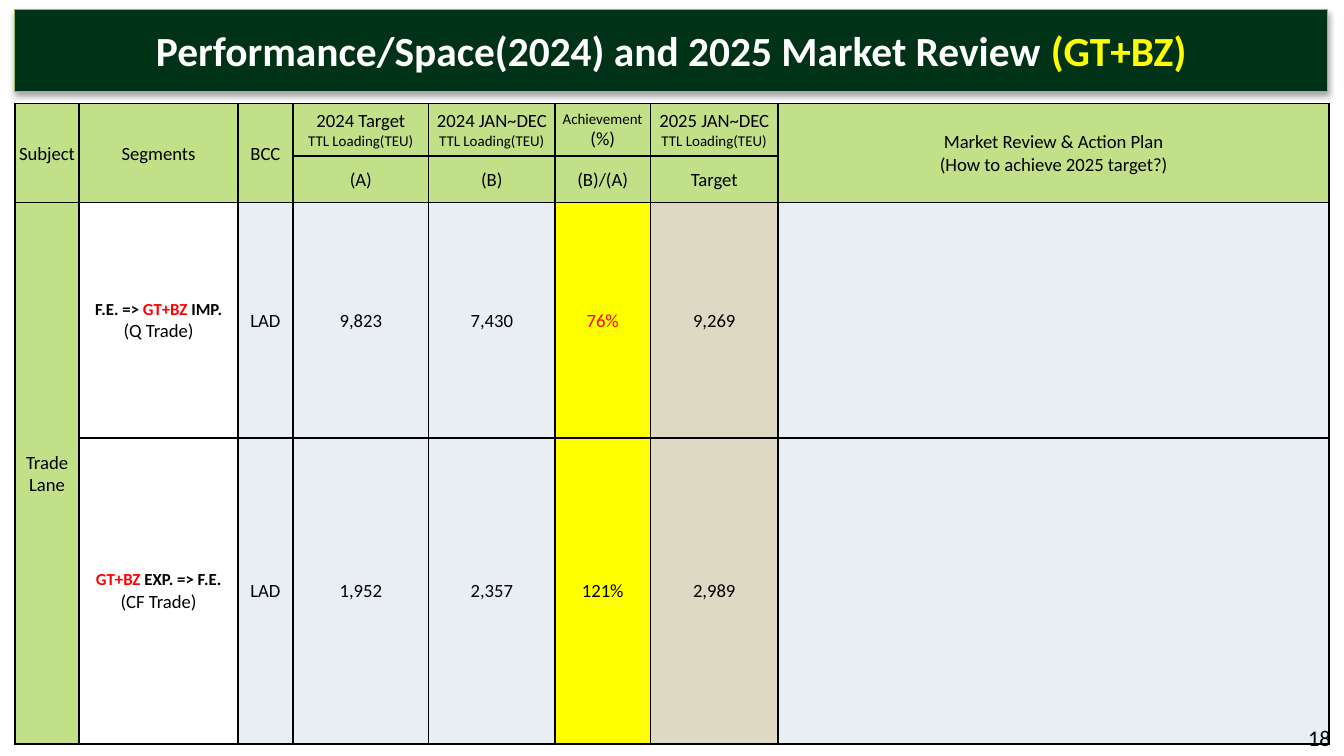
"""Build the 2024 performance and 2025 market review slide."""
from lxml.etree import SubElement
from pptx import Presentation
from pptx.dml.color import RGBColor as RGB
from pptx.enum.shapes import MSO_SHAPE as SHAPE
from pptx.enum.text import MSO_ANCHOR as ANCHOR, PP_ALIGN as ALIGN
from pptx.oxml.ns import qn
from pptx.util import Inches, Pt

THEME = {
    "colors": {
        "black": "000000", "white": "FFFFFF", "red": "FF0000", "yellow": "FFFF00",
        "dark": "003217", "edge": "98B955", "head": "C2E088", "pale": "E9EDF4",
        "tan": "DDD9C3",
    },
    "fonts": {
        "title": {"size": Pt(22.2), "bold": True},
        "body": {"size": Pt(10), "bold": False},
        "small": {"size": Pt(8), "bold": False},
        "lane": {"size": Pt(9), "bold": True},
        "page": {"size": Pt(12), "bold": False},
    },
    "face": "Calibri",
}
SLIDE = {"slide_width": Inches(10), "slide_height": Inches(10) * 9 // 16}
CELL = {
    "margin_left": Inches(0.01), "margin_right": Inches(0.01),
    "margin_top": Inches(0.01), "margin_bottom": 0,
    "vertical_anchor": ANCHOR.MIDDLE,
}

LEFT, WIDTH = 0.11, 9.77
COLS = [0.48, 1.18, 0.41, 1.01, 0.94, 0.71, 0.95, 4.1]
ROWS = [0.39, 0.34, 1.75, 2.28]
MERGES = [(0, 0), (0, 1), (0, 2), (0, 7), (2, 0)]
BODY_FILLS = ["head", None, "pale", "pale", "pale", "yellow", "tan", "pale"]

TITLE = [[("Performance/Space(2024) and 2025 Market Review ", "title", "white"),
          ("(GT+BZ)", "title", "yellow")]]
PAGE = [[("18", "page")]]
LOADING = [("TTL Loading(TEU)", "small")]
TABLE = [
    ["Subject", "Segments", "BCC",
     [[("2024 Target",)], LOADING],
     [[("2024 JAN~DEC",)], LOADING],
     [[("Achievement", "small")], [("(%)",)]],
     [[("2025 JAN~DEC",)], LOADING],
     [[("Market Review & Action Plan",)], [("(How to achieve 2025 target?)",)]]],
    ["", "", "", "(A)", "(B)", "(B)/(A)", "Target", ""],
    ["Trade Lane",
     [[("F.E. => ", "lane"), ("GT+BZ", "lane", "red"), (" IMP.", "lane")],
      [("(Q Trade)",)]],
     "LAD", "9,823", "7,430", [[("76%", "body", "red")]], "9,269", ""],
    ["",
     [[("GT+BZ", "lane", "red"), (" EXP. => F.E.", "lane")], [("(CF Trade)",)]],
     "LAD", "1,952", "2,357", "121%", "2,989", ""],
]


def color(name):
    return RGB.from_string(THEME["colors"][name])


def apply(obj, values):
    for name, value in values.items():
        setattr(obj, name, value)


def paint(fill, name):
    if name is None:
        fill.background()
    else:
        fill.solid()
        fill.fore_color.rgb = color(name)


def line_runs(line):
    defaults = ("", "body", "black")
    return [run + defaults[len(run):] for run in line]


def write(tf, lines, align=ALIGN.CENTER):
    for i, line in enumerate(lines):
        p = tf.paragraphs[0] if i == 0 else tf.add_paragraph()
        p.alignment = align
        for text, style, tint in line_runs(line):
            r = p.add_run()
            r.text = text
            apply(r.font, {"name": THEME["face"], **THEME["fonts"][style]})
            r.font.color.rgb = color(tint)


def add_color(parent, name):
    return SubElement(parent, qn("a:srgbClr"), val=THEME["colors"][name])


def add_borders(cell):
    tc_pr = cell._tc.get_or_add_tcPr()
    for i, side in enumerate(("lnL", "lnR", "lnT", "lnB")):
        ln = tc_pr.makeelement(qn(f"a:{side}"), {"w": str(Pt(1))})
        add_color(SubElement(ln, qn("a:solidFill")), "black")
        tc_pr.insert(i, ln)


def add_title(s):
    sp = s.shapes.add_shape(SHAPE.RECTANGLE, Inches(LEFT), Inches(0.07),
                            Inches(WIDTH), Inches(0.61))
    paint(sp.fill, "dark")
    paint(sp.line.fill, "edge")
    sp.line.width = Pt(0.75)
    sp.shadow.inherit = False
    effects = sp._element.spPr.find(qn("a:effectLst"))
    shadow = SubElement(effects, qn("a:outerShdw"), blurRad=str(Pt(3.1)),
                        dist=str(Pt(1.8)), dir="5400000", rotWithShape="0")
    SubElement(add_color(shadow, "black"), qn("a:alpha"), val="35000")
    apply(sp.text_frame, {"word_wrap": True, "vertical_anchor": ANCHOR.MIDDLE})
    write(sp.text_frame, TITLE)


def add_review(s):
    table = s.shapes.add_table(len(ROWS), len(COLS), Inches(LEFT), Inches(0.77),
                               Inches(WIDTH), Inches(sum(ROWS))).table
    for col, width in zip(table.columns, COLS):
        col.width = Inches(width)
    for row, height in zip(table.rows, ROWS):
        row.height = Inches(height)
    for i, row in enumerate(TABLE):
        for j, content in enumerate(row):
            cell = table.cell(i, j)
            apply(cell, CELL)
            paint(cell.fill, "head" if i < 2 else BODY_FILLS[j])
            add_borders(cell)
            if content:
                lines = [[(content,)]] if isinstance(content, str) else content
                write(cell.text_frame, lines)
    for i, j in MERGES:
        table.cell(i, j).merge(table.cell(i + 1, j))


def add_page_number(s):
    sp = s.shapes.add_textbox(Inches(7.67), Inches(5.34), Inches(2.33), Inches(0.3))
    sp.text_frame.word_wrap = True
    write(sp.text_frame, PAGE, ALIGN.RIGHT)


def main():
    prs = Presentation()
    apply(prs, SLIDE)
    s = prs.slides.add_slide(prs.slide_layouts[6])
    add_review(s)
    add_title(s)
    add_page_number(s)
    prs.save("out.pptx")


if __name__ == "__main__":
    main()
